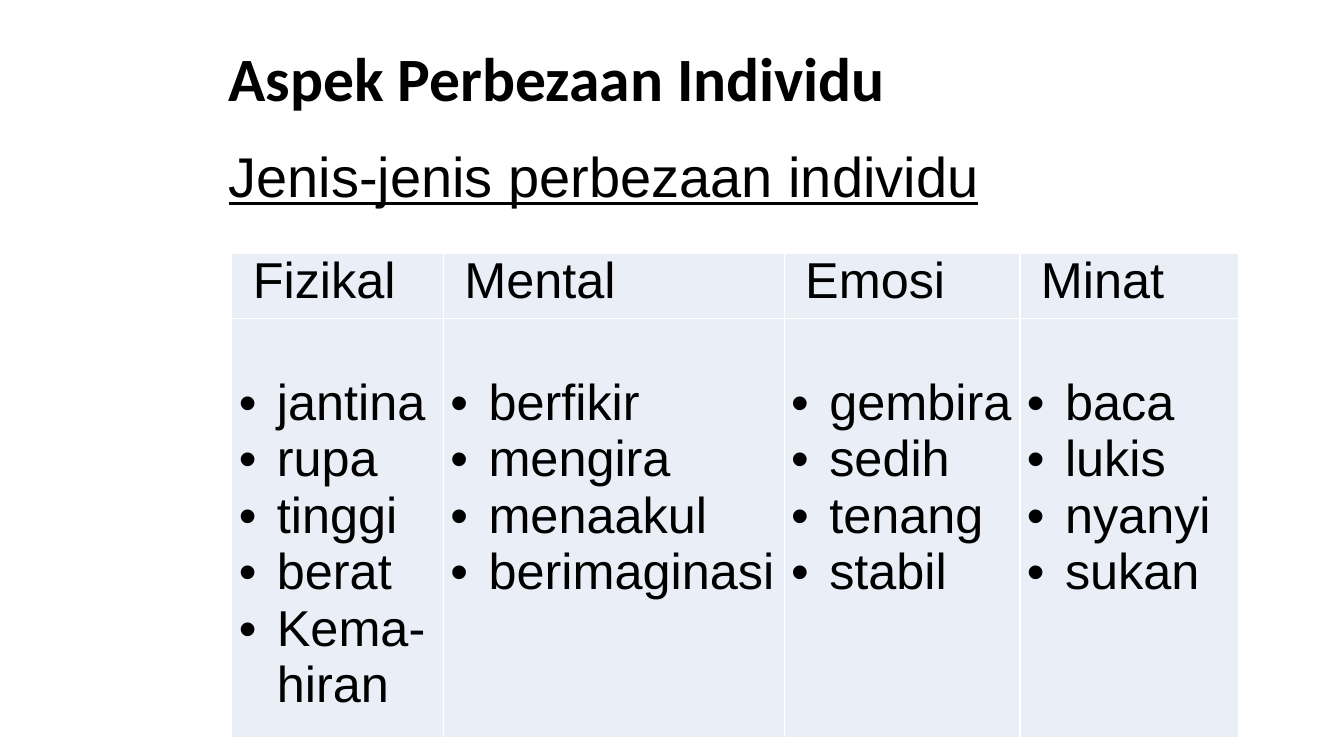
from dataclasses import dataclass

from lxml.etree import SubElement
from pptx import Presentation
from pptx.dml.color import RGBColor
from pptx.enum.text import MSO_ANCHOR as Anchor
from pptx.oxml.ns import qn
from pptx.util import Pt

COLORS = {"text": "000000", "cell": "EAEFF7", "border": "FFFFFF"}
TABLE_FORMAT = {"name": "Arial", "size": Pt(36)}
TABLE_LEFT, TABLE_TOP = 165.6, 180.7
HEADER_HEIGHT, LIST_HEIGHT = 46.8, 282
CELL_INSET, HEADER_INDENT, LIST_GAP = 5, 10, 40.2
BULLET_INDENT = 27.2


@dataclass
class Heading:
    text: str
    top: float
    height: float
    anchor: Anchor
    format: dict


@dataclass
class Aspect:
    name: str
    width: float
    examples: list[str]


HEADINGS = [
    Heading("Aspek Perbezaan Individu", 28.8, 59, Anchor.MIDDLE,
            {"name": "Calibri", "size": Pt(44), "bold": True}),
    Heading("Jenis-jenis perbezaan individu", 103, 383, Anchor.TOP,
            {"name": "Arial", "size": Pt(40), "underline": True}),
]
ASPECTS = [
    Aspect("Fizikal", 151.2, ["jantina", "rupa", "tinggi", "berat", "Kema-hiran"]),
    Aspect("Mental", 243.4, ["berfikir", "mengira", "menaakul", "berimaginasi"]),
    Aspect("Emosi", 168.4, ["gembira", "sedih", "tenang", "stabil"]),
    Aspect("Minat", 156.3, ["baca", "lukis", "nyanyi", "sukan"]),
]


def write(paragraph, text: str, font_format: dict) -> None:
    run = paragraph.add_run()
    run.text = text
    for name, value in font_format.items():
        setattr(run.font, name, value)
    run.font.color.rgb = RGBColor.from_string(COLORS["text"])


def add_heading(slide, heading: Heading) -> None:
    box = slide.shapes.add_textbox(Pt(156.2), Pt(heading.top), Pt(738), Pt(heading.height))
    frame = box.text_frame
    frame.word_wrap = True
    frame.vertical_anchor = heading.anchor
    paragraph = frame.paragraphs[0]
    paragraph.line_spacing = 0.9
    write(paragraph, heading.text, heading.format)


def add_bullet(paragraph) -> None:
    properties = paragraph._p.get_or_add_pPr()
    properties.set("marL", str(Pt(BULLET_INDENT)))
    properties.set("indent", str(-Pt(BULLET_INDENT)))
    SubElement(properties, qn("a:buFont"), typeface="Arial")
    SubElement(properties, qn("a:buChar"), char="•")


def add_borders(cell) -> None:
    """Put a 1 pt line on each side; the lines must precede the fill."""
    properties = cell._tc.get_or_add_tcPr()
    for side in ("a:lnL", "a:lnR", "a:lnT", "a:lnB"):
        line = SubElement(properties, qn(side), w=str(Pt(1)))
        fill = SubElement(line, qn("a:solidFill"))
        SubElement(fill, qn("a:srgbClr"), val=COLORS["border"])


def fill_cell(cell, lines: list[str], left: float, top: float, bulleted: bool) -> None:
    add_borders(cell)
    cell.fill.solid()
    cell.fill.fore_color.rgb = RGBColor.from_string(COLORS["cell"])
    margins = {"left": left, "top": top, "right": CELL_INSET, "bottom": 0}
    for side, margin in margins.items():
        setattr(cell, f"margin_{side}", Pt(margin))
    frame = cell.text_frame
    for index, text in enumerate(lines):
        paragraph = frame.add_paragraph() if index else frame.paragraphs[0]
        if bulleted:
            add_bullet(paragraph)
        write(paragraph, text, TABLE_FORMAT)


def add_aspect_table(slide, aspects: list[Aspect]) -> None:
    width = sum(aspect.width for aspect in aspects)
    frame = slide.shapes.add_table(2, len(aspects), Pt(TABLE_LEFT), Pt(TABLE_TOP),
                                   Pt(width), Pt(HEADER_HEIGHT + LIST_HEIGHT))
    table = frame.table
    table.first_row = table.horz_banding = False
    for row, height in zip(table.rows, (HEADER_HEIGHT, LIST_HEIGHT)):
        row.height = Pt(height)
    for index, aspect in enumerate(aspects):
        table.columns[index].width = Pt(aspect.width)
        fill_cell(table.cell(0, index), [aspect.name], CELL_INSET + HEADER_INDENT, 0, False)
        fill_cell(table.cell(1, index), aspect.examples, CELL_INSET, LIST_GAP, True)


def main() -> None:
    presentation = Presentation()
    presentation.slide_width, presentation.slide_height = Pt(960), Pt(540)
    slide = presentation.slides.add_slide(presentation.slide_layouts[6])
    for heading in HEADINGS:
        add_heading(slide, heading)
    add_aspect_table(slide, ASPECTS)
    presentation.save("out.pptx")


if __name__ == "__main__":
    main()
